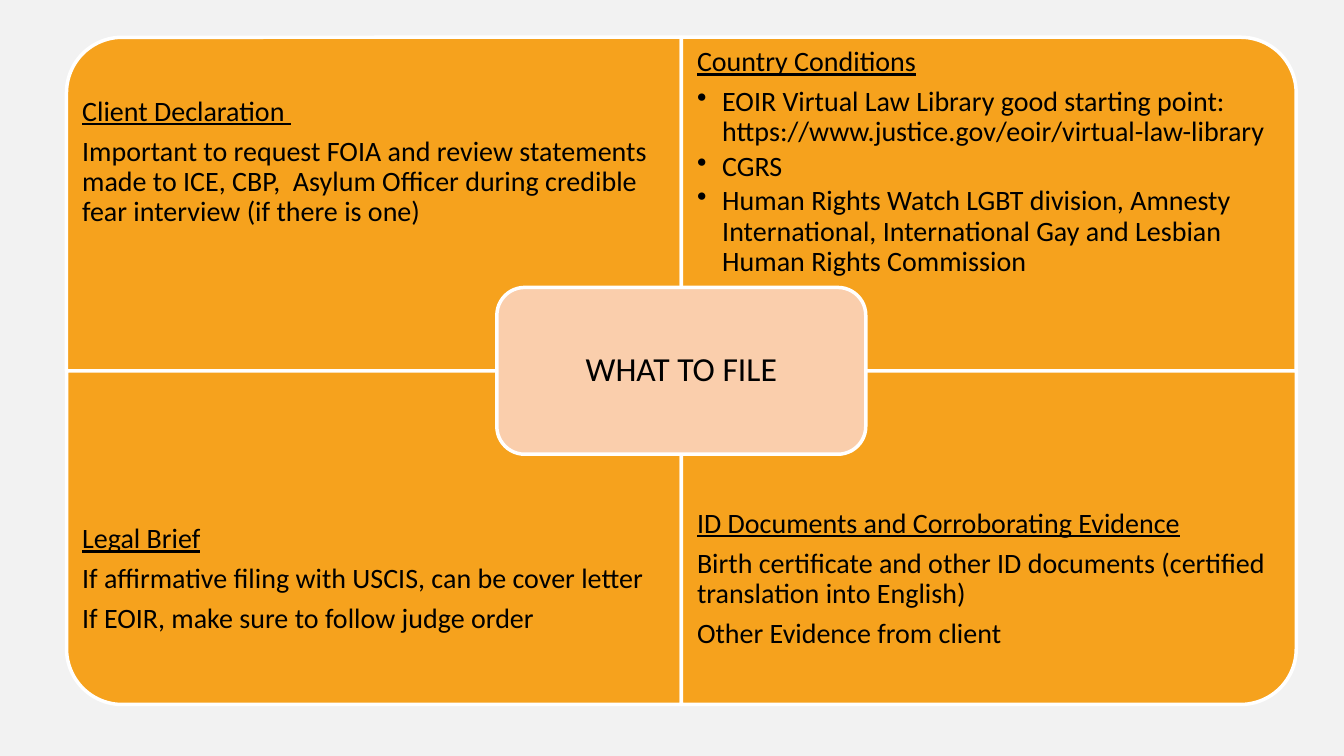
import pptx
import pptx.util
import pptx.dml.color
import pptx.enum.shapes
import pptx.enum.text
import pptx.oxml
from pptx.oxml.ns import nsdecls

Pt = pptx.util.Pt
SHAPE = pptx.enum.shapes.MSO_SHAPE
ALIGN = pptx.enum.text.PP_ALIGN

# Content: column, row, rotation, heading, bulleted, paragraphs
TITLE = "WHAT TO FILE"
QUADRANTS = [
    (0, 0, 270, "Client Declaration ", False, [
        "Important to request FOIA and review statements made to ICE, CBP,  "
        "Asylum Officer during credible fear interview (if there is one)"]),
    (1, 0, 0, "Country Conditions", True, [
        "EOIR Virtual Law Library good starting point: "
        "https://www.justice.gov/eoir/virtual-law-library",
        "CGRS",
        "Human Rights Watch LGBT division, Amnesty International, "
        "International Gay and Lesbian Human Rights Commission"]),
    (0, 1, 180, "Legal Brief", False, [
        "If affirmative filing with USCIS, can be cover letter",
        "If EOIR, make sure to follow judge order"]),
    (1, 1, 90, "ID Documents and Corroborating Evidence", False, [
        "Birth certificate and other ID documents "
        "(certified translation into English)",
        "Other Evidence from client"]),
]
COLORS = {"back": "F2F2F2", "quadrant": "F6A21D", "card": "FACEAC",
          "line": "FFFFFF", "text": "000000"}
FONT = "Calibri"

# Layout, in points
LEFT, TOP = 47.5, 26.6
QUAD_W, QUAD_H = 439.2, 238.3
TEXT_H = QUAD_H * 0.75
CENTER_X, CENTER_Y = LEFT + QUAD_W, TOP + QUAD_H
CARD_W, CARD_H = QUAD_W * 0.6, QUAD_H * 0.5
CARD_PAD = 5.8
INDENT = 18


def rgb(name):
    return pptx.dml.color.RGBColor.from_string(COLORS[name])


def add_panel(s, kind, cx, cy, w, h, fill):
    sp = s.shapes.add_shape(kind, Pt(cx - w / 2), Pt(cy - h / 2), Pt(w), Pt(h))
    sp.shadow.inherit = False
    sp.fill.solid()
    sp.fill.fore_color.rgb = rgb(fill)
    sp.line.color.rgb = rgb("line")
    sp.line.width = Pt(2.5)
    return sp


def set_frame(tf, inset):
    tf.word_wrap = True
    tf.auto_size = pptx.enum.text.MSO_AUTO_SIZE.NONE
    tf.vertical_anchor = pptx.enum.text.MSO_ANCHOR.MIDDLE
    tf.margin_left = tf.margin_right = Pt(inset)
    tf.margin_top = tf.margin_bottom = Pt(inset)


def write(p, text, size, after, align=ALIGN.LEFT, underline=False):
    p.alignment = align
    p.line_spacing = 0.9
    p.space_before = Pt(0)
    p.space_after = Pt(after)
    r = p.add_run()
    r.text = text
    r.font.name = FONT
    r.font.size = Pt(size)
    r.font.underline = underline
    r.font.color.rgb = rgb("text")


def add_bullet(p):
    pPr = p._p.get_or_add_pPr()
    pPr.set("marL", str(Pt(INDENT)))
    pPr.set("indent", str(-Pt(INDENT)))
    pPr.append(pptx.oxml.parse_xml(f'<a:buChar {nsdecls("a")} char="•"/>'))


prs = pptx.Presentation()
prs.slide_width, prs.slide_height = Pt(960), Pt(540)
s = prs.slides.add_slide(prs.slide_layouts[5])
s.background.fill.solid()
s.background.fill.fore_color.rgb = rgb("back")

# Quadrants, each with its rounded corner turned outwards
for col, row, angle, heading, bulleted, lines in QUADRANTS:
    x, y = LEFT + col * QUAD_W, TOP + row * QUAD_H
    w, h = (QUAD_H, QUAD_W) if angle % 180 else (QUAD_W, QUAD_H)
    sp = add_panel(s, SHAPE.ROUND_1_RECTANGLE, x + QUAD_W / 2, y + QUAD_H / 2,
                   w, h, "quadrant")
    sp.rotation = angle

    # Text keeps to the outer three quarters of the quadrant
    text_y = y + row * (QUAD_H - TEXT_H)
    tf = s.shapes.add_textbox(Pt(x), Pt(text_y), Pt(QUAD_W), Pt(TEXT_H)).text_frame
    set_frame(tf, 11.2)
    write(tf.paragraphs[0], heading, 20, 7, underline=True)
    for line in lines:
        p = tf.add_paragraph()
        write(p, line, 20, 3 if bulleted else 7)
        if bulleted:
            add_bullet(p)

# Centre card with the title on top
add_panel(s, SHAPE.ROUNDED_RECTANGLE, CENTER_X, CENTER_Y, CARD_W, CARD_H, "card")
title = s.shapes.title
title_w, title_h = CARD_W - 2 * CARD_PAD, CARD_H - 2 * CARD_PAD
title.left, title.top = Pt(CENTER_X - title_w / 2), Pt(CENTER_Y - title_h / 2)
title.width, title.height = Pt(title_w), Pt(title_h)
set_frame(title.text_frame, 7.2)
write(title.text_frame.paragraphs[0], TITLE, 24, 8.4, ALIGN.CENTER)
s.shapes._spTree.append(title._element)

prs.save("out.pptx")
